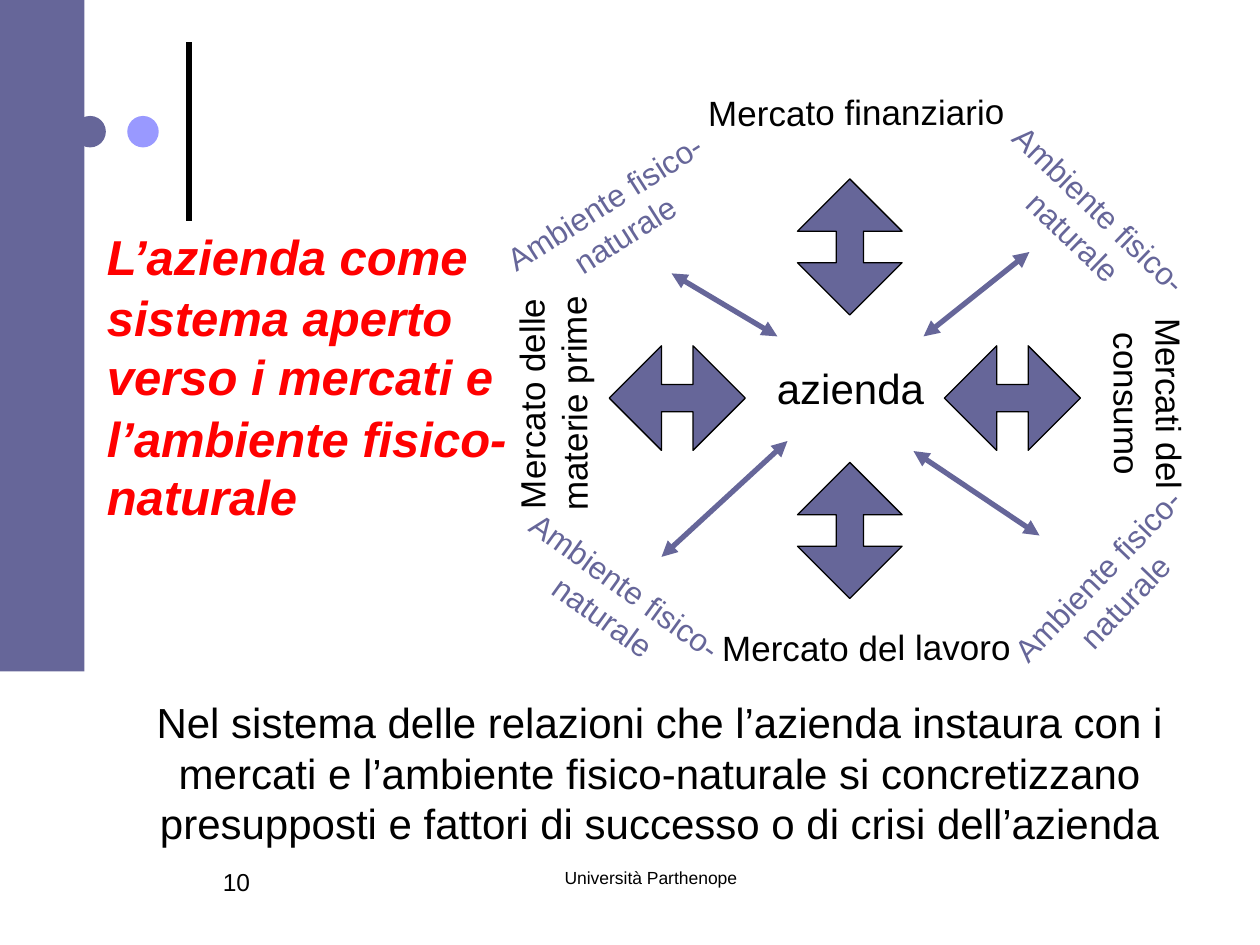
from lxml import etree
from pptx import Presentation
from pptx.dml.color import RGBColor
from pptx.enum import shapes, text
from pptx.oxml.ns import qn
from pptx.util import Inches, Pt

BLACK, RED, SLATE, LILAC = "000000", "FF0000", "666699", "9999FF"
CENTER, LEFT = text.PP_ALIGN.CENTER, text.PP_ALIGN.LEFT
KIND = shapes.MSO_SHAPE

# Content: positions in inches as left, top, width, height
TITLE = ["L’azienda come", "sistema aperto verso i mercati e", "l’ambiente fisico-naturale"]
SUMMARY = ("Nel sistema delle relazioni che l’azienda instaura con i mercati e "
           "l’ambiente fisico-naturale si concretizzano presupposti e fattori di "
           "successo o di crisi dell’azienda")
ENVIRONMENT = "Ambiente fisico-naturale"
ENVIRONMENT_PLACES = [  # place, rotation
    ((3.5, 1.38, 2.75, 0.7), 327.4),
    ((7.25, 1.42, 2.75, 0.7), 43.9),
    ((3.5, 4.42, 2.75, 0.7), 35.8),
    ((7.65, 4.32, 2.33, 0.7), 313.9),
]
MARKETS = [  # label, place, rotation
    ("Mercato finanziario", (5.42, 0.67, 2.75, 0.43), 359.7),
    ("Mercato delle materie prime", (3.01, 2.82, 2.75, 0.77), 269.7),
    ("Mercati del consumo", (7.74, 2.82, 2.75, 0.77), 89.7),
    ("Mercato del lavoro", (5.5, 4.92, 2.75, 0.43), 359.7),
]
ARROW_SIZE = (0.83, 1.08)
MARKET_ARROWS = [(6.33, 1.42, 0), (6.33, 3.67, 0), (4.96, 2.62, 90), (7.62, 2.62, 90)]
ENVIRONMENT_ARROWS = [  # start, end
    ((5.25, 4.42), (6.25, 3.5)),
    ((7.33, 2.67), (8.17, 2)),
    ((5.33, 2.17), (6.17, 2.67)),
    ((7.25, 3.58), (8.25, 4.25)),
]

deck = Presentation()
deck.slide_width, deck.slide_height = Inches(10), Inches(7.5)
page = deck.slides.add_slide(deck.slide_layouts[6])


def color(value):
    return RGBColor.from_string(value)


def add_text(paragraphs, place, size, ink=BLACK, align=CENTER, rotation=0, strong=False):
    box = page.shapes.add_textbox(*map(Inches, place))
    box.rotation = rotation
    frame = box.text_frame
    frame.word_wrap = True
    for index, line in enumerate(paragraphs):
        para = frame.paragraphs[0] if index == 0 else frame.add_paragraph()
        para.text = line
        para.alignment = align
        if index:
            para.space_before = Pt(size * 0.05)
        font = para.font
        font.name, font.size, font.color.rgb = "Arial", Pt(size), color(ink)
        if strong:
            font.bold = font.italic = True


def add_figure(kind, place, fill, outline=None, rotation=0):
    figure = page.shapes.add_shape(kind, *map(Inches, place))
    figure.shadow.inherit = False
    figure.rotation = rotation
    figure.fill.solid()
    figure.fill.fore_color.rgb = color(fill)
    if outline:
        figure.line.color.rgb = color(outline)
        figure.line.width = Pt(0.75)
    else:
        figure.line.fill.background()
    return figure


def add_line(start, end, ink, arrows=False):
    line = page.shapes.add_connector(shapes.MSO_CONNECTOR.STRAIGHT, *map(Inches, start + end))
    line.line.color.rgb = color(ink)
    line.line.width = Pt(3)
    if arrows:
        outline = line.line._get_or_add_ln()
        for tag in ("a:headEnd", "a:tailEnd"):
            etree.SubElement(outline, qn(tag)).set("type", "triangle")
    etree.SubElement(line._element.spPr, qn("a:effectLst"))


# Decoration on the left
add_line((1.5, 1.75), (1.5, 0.33), BLACK)
for left, fill in ((0.59, SLATE), (1.01, LILAC)):
    add_figure(KIND.OVAL, (left, 0.92, 0.25, 0.25), fill)
add_figure(KIND.RECTANGLE, (0, 0, 0.67, 5.33), SLATE)

# Footer
add_text(["Università Parthenope"], (3.58, 6.83, 3.17, 0.5), 10)
add_text(["10"], (1.67, 6.83, 1.42, 0.5), 14, align=LEFT)

# Diagram labels
add_text(["azienda"], (6, 2.83, 1.5, 0.5), 24)
for place, rotation in ENVIRONMENT_PLACES:
    add_text([ENVIRONMENT], place, 18, SLATE, rotation=rotation)
for label, place, rotation in MARKETS:
    add_text([label], place, 20, rotation=rotation)

# Title and summary
add_text(TITLE, (0.75, 1.75, 3.5, 2.48), 28, RED, LEFT, strong=True)
add_text([SUMMARY], (0.9, 5.48, 8.67, 1.3), 24)

# Arrows between the company and its surroundings
for left, top, rotation in MARKET_ARROWS:
    arrow = add_figure(KIND.UP_DOWN_ARROW, (left, top) + ARROW_SIZE, SLATE, BLACK, rotation)
    arrow.adjustments[0], arrow.adjustments[1] = 0.5, 0.26
for start, end in ENVIRONMENT_ARROWS:
    add_line(start, end, SLATE, arrows=True)

deck.save("out.pptx")
